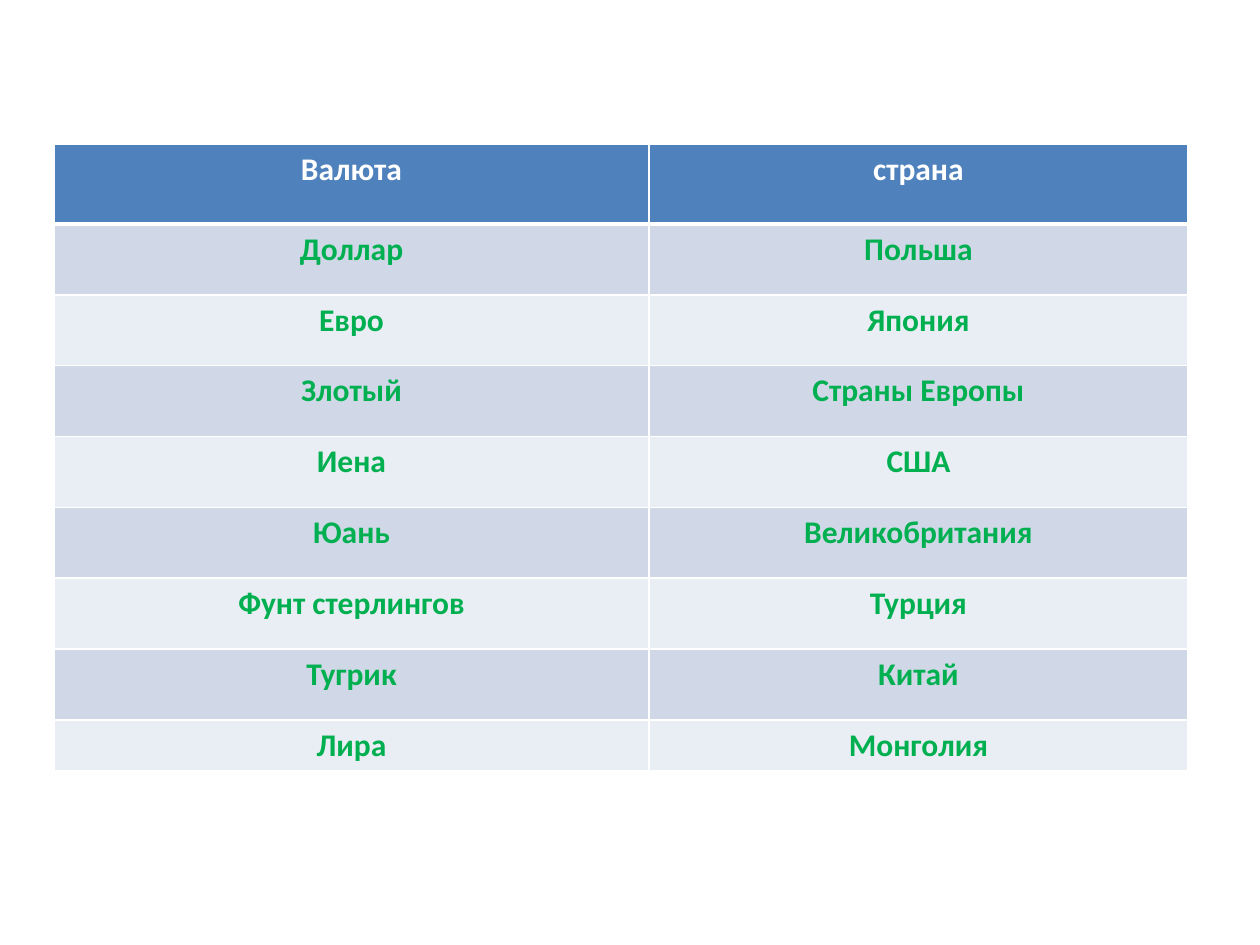
from dataclasses import dataclass

from lxml.etree import SubElement
from pptx import Presentation
from pptx.dml.color import RGBColor
from pptx.enum.text import PP_ALIGN
from pptx.oxml.ns import qn
from pptx.table import _Cell
from pptx.util import Inches, Pt


@dataclass(frozen=True)
class Theme:
    font: str = "Calibri"
    size: int = 18
    header_fill: str = "4F81BD"
    header_text: str = "FFFFFF"
    body_text: str = "00B050"
    bands: tuple[str, str] = ("D0D8E8", "E9EDF4")
    border: str = "FFFFFF"
    thin: int = 1
    thick: int = 3


@dataclass(frozen=True)
class Grid:
    left: float = 0.043
    top: float = 0.153
    columns: tuple[float, ...] = (0.472, 0.428)
    header: float = 0.084
    row: float = 0.075
    last: float = 0.048

    def heights(self, count: int) -> list[float]:
        return [self.header] + [self.row] * (count - 2) + [self.last]


@dataclass(frozen=True)
class CellStyle:
    fill: str
    text: str
    top: int
    bottom: int


THEME = Theme()
GRID = Grid()
ROWS = [
    ("Валюта", "страна"),
    ("Доллар", "Польша"),
    ("Евро", "Япония"),
    ("Злотый", "Страны Европы"),
    ("Иена", "США"),
    ("Юань", "Великобритания"),
    ("Фунт стерлингов", "Турция"),
    ("Тугрик", "Китай"),
    ("Лира", "Монголия"),
]


def row_style(index: int) -> CellStyle:
    if index == 0:
        return CellStyle(THEME.header_fill, THEME.header_text, THEME.thin, THEME.thick)
    top = THEME.thick if index == 1 else THEME.thin
    return CellStyle(THEME.bands[(index - 1) % 2], THEME.body_text, top, THEME.thin)


def set_border(cell: _Cell, side: str, width: int) -> None:
    ln = SubElement(cell._tc.get_or_add_tcPr(), qn(f"a:ln{side}"), w=str(Pt(width)))
    fill = SubElement(ln, qn("a:solidFill"))
    SubElement(fill, qn("a:srgbClr"), val=THEME.border)


def draw_cell(cell: _Cell, text: str, style: CellStyle) -> None:
    widths = {"L": THEME.thin, "R": THEME.thin, "T": style.top, "B": style.bottom}
    for side, width in widths.items():
        set_border(cell, side, width)
    cell.fill.solid()
    cell.fill.fore_color.rgb = RGBColor.from_string(style.fill)
    cell.text_frame.text = text
    p = cell.text_frame.paragraphs[0]
    p.alignment = PP_ALIGN.CENTER
    font = p.runs[0].font
    font.name = THEME.font
    font.size = Pt(THEME.size)
    font.bold = True
    font.color.rgb = RGBColor.from_string(style.text)


def main() -> None:
    prs = Presentation()
    prs.slide_width, prs.slide_height = Inches(10), Inches(7.5)
    w, h = prs.slide_width, prs.slide_height
    s = prs.slides.add_slide(prs.slide_layouts[6])
    heights = GRID.heights(len(ROWS))
    table = s.shapes.add_table(
        len(ROWS), len(GRID.columns),
        int(w * GRID.left), int(h * GRID.top),
        int(w * sum(GRID.columns)), int(h * sum(heights)),
    ).table
    for column, share in zip(table.columns, GRID.columns):
        column.width = int(w * share)
    for i, (row, share, texts) in enumerate(zip(table.rows, heights, ROWS)):
        row.height = int(h * share)
        for cell, text in zip(row.cells, texts):
            draw_cell(cell, text, row_style(i))
    prs.save("out.pptx")


if __name__ == "__main__":
    main()
